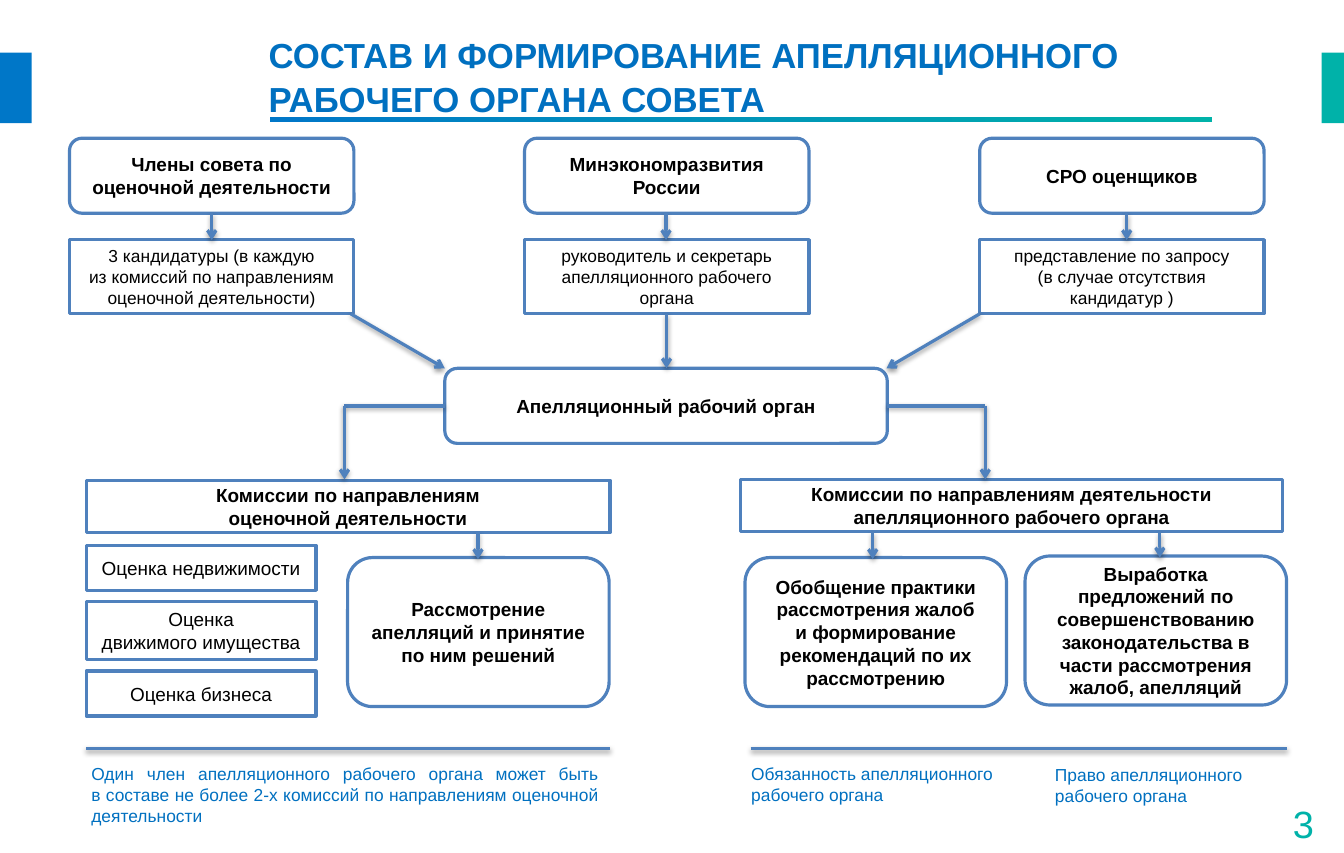
"""Build a slide on how the appeals working body is composed and formed."""
from pptx import Presentation
from pptx.dml.color import RGBColor
from pptx.enum.shapes import MSO_CONNECTOR, MSO_SHAPE
from pptx.enum.text import MSO_ANCHOR, PP_ALIGN
from pptx.oxml import parse_xml
from pptx.oxml.ns import nsdecls
from pptx.util import Pt

BLUE = RGBColor(0x00, 0x77, 0xC8)
TEAL = RGBColor(0x00, 0xB2, 0xA9)
TITLE_BLUE = RGBColor(0x00, 0x70, 0xC0)
LINE_BLUE = RGBColor(0x4F, 0x81, 0xBD)
BLACK = RGBColor(0x00, 0x00, 0x00)
WHITE = RGBColor(0xFF, 0xFF, 0xFF)

SHADOW = (
    f'<a:effectLst {nsdecls("a")}><a:outerShdw blurRad="40000" dist="20000" '
    'dir="5400000" rotWithShape="0"><a:srgbClr val="000000">'
    '<a:alpha val="38000"/></a:srgbClr></a:outerShdw></a:effectLst>'
)
ARROWHEAD = f'<a:tailEnd {nsdecls("a")} type="arrow"/>'


class Diagram:
    """Draw the slide elements in one shared style."""

    font_name = "Arial"
    line_width = Pt(2)

    def __init__(self, slide):
        self.shapes = slide.shapes

    def set_text(self, text_frame, text, size, color, bold, alignment):
        """Fill a text frame with uniformly styled text."""
        text_frame.word_wrap = True
        text_frame.text = text
        for paragraph in text_frame.paragraphs:
            paragraph.alignment = alignment
            paragraph.font.name = self.font_name
            paragraph.font.size = Pt(size)
            paragraph.font.bold = bold
            paragraph.font.color.rgb = color

    def bar(self, left, top, width, height, color, end_color=None):
        """Add a borderless bar, plain or with a horizontal gradient."""
        shape = self.shapes.add_shape(
            MSO_SHAPE.RECTANGLE, Pt(left), Pt(top), Pt(width), Pt(height))
        shape.shadow.inherit = False
        shape.line.fill.background()
        if end_color is None:
            shape.fill.solid()
            shape.fill.fore_color.rgb = color
        else:
            shape.fill.gradient()
            shape.fill.gradient_angle = 0
            for stop, stop_color in zip(shape.fill.gradient_stops, (color, end_color)):
                stop.color.rgb = stop_color

    def box(self, left, top, width, height, text, size=12, bold=True, rounded=False):
        """Add an outlined box with centred text."""
        kind = MSO_SHAPE.ROUNDED_RECTANGLE if rounded else MSO_SHAPE.RECTANGLE
        shape = self.shapes.add_shape(kind, Pt(left), Pt(top), Pt(width), Pt(height))
        shape.shadow.inherit = False
        shape.fill.solid()
        shape.fill.fore_color.rgb = WHITE
        shape.line.color.rgb = LINE_BLUE
        shape.line.width = self.line_width
        shape.text_frame.vertical_anchor = MSO_ANCHOR.MIDDLE
        self.set_text(shape.text_frame, text, size, BLACK, bold, PP_ALIGN.CENTER)

    def label(self, left, top, width, height, text, size=11, color=TITLE_BLUE,
              bold=False, alignment=PP_ALIGN.LEFT):
        """Add free-standing text and return its frame."""
        shape = self.shapes.add_textbox(Pt(left), Pt(top), Pt(width), Pt(height))
        self.set_text(shape.text_frame, text, size, color, bold, alignment)
        return shape.text_frame

    def line(self, start_x, start_y, end_x, end_y, arrow=False):
        """Add a shadowed line, with an arrowhead at its end if asked."""
        connector = self.shapes.add_connector(
            MSO_CONNECTOR.STRAIGHT, Pt(start_x), Pt(start_y), Pt(end_x), Pt(end_y))
        connector.line.color.rgb = LINE_BLUE
        connector.line.width = self.line_width
        if arrow:
            connector.get_or_add_ln().append(parse_xml(ARROWHEAD))
        connector.element.spPr.append(parse_xml(SHADOW))


def add_heading(diagram):
    """Add the title, the decorative bars and the slide number."""
    diagram.bar(0, 33.3, 20, 44.7, BLUE)
    diagram.bar(836.3, 33.3, 14.2, 44.7, TEAL)
    diagram.bar(171, 74, 596, 3.4, BLUE, TEAL)
    title = diagram.label(
        170, 20, 669, 54, "СОСТАВ И ФОРМИРОВАНИЕ АПЕЛЛЯЦИОННОГО\vРАБОЧЕГО ОРГАНА СОВЕТА",
        size=22, bold=True)
    title.margin_left = title.margin_top = title.margin_right = title.margin_bottom = 0
    title.paragraphs[0].line_spacing = 1.05
    diagram.label(768, 503, 70.5, 29, "3", size=24, color=TEAL, alignment=PP_ALIGN.RIGHT)


def add_sources(diagram):
    """Add the three nominating parties and the body they form."""
    sources = [
        ("Члены совета по оценочной деятельности",
         "3 кандидатуры (в каждую\nиз комиссий по направлениям оценочной деятельности)", 134),
        ("Минэкономразвития России",
         "руководитель и секретарь апелляционного рабочего органа", 421.5),
        ("СРО оценщиков",
         "представление по запросу\v(в случае отсутствия кандидатур )", 713),
    ]
    for column, (party, contribution, arrow_x) in enumerate(sources):
        left = 44 + 288 * column
        diagram.box(left, 87.5, 180, 47.5, party, rounded=True)
        diagram.box(left, 151.7, 180, 46.8, contribution, size=11, bold=False)
        diagram.line(arrow_x, 135, arrow_x, 152, arrow=True)
    diagram.box(281.5, 233.2, 280, 47.5, "Апелляционный рабочий орган", rounded=True)
    for start_x, end_x in ((222, 281.5), (421.8, 421.8), (620, 561)):
        diagram.line(start_x, 198.7, end_x, 233.2, arrow=True)


def add_commissions(diagram):
    """Add both groups of commissions with their tasks."""
    diagram.box(54.5, 304, 331.5, 33.3, "Комиссии по направлениям\vоценочной деятельности")
    diagram.box(468.7, 303.3, 343, 33.3,
                "Комиссии по направлениям деятельности апелляционного рабочего органа")
    for edge_x, branch_x in ((281.5, 218), (561.5, 623.5)):
        diagram.line(edge_x, 257, branch_x, 257)
        diagram.line(branch_x, 257, branch_x, 303.5, arrow=True)

    fields = [
        (345.3, 28.5, "Оценка недвижимости"),
        (380.8, 36.5, "Оценка\vдвижимого имущества"),
        (424.8, 28.5, "Оценка бизнеса"),
    ]
    for top, height, text in fields:
        diagram.box(54.5, top, 145.5, height, text, bold=False)

    tasks = [
        (220, 353, 302.5, "Рассмотрение\vапелляций и принятие по ним решений"),
        (471.5, 353, 552.3,
         "Обобщение практики рассмотрения жалоб\vи формирование рекомендаций по их рассмотрению"),
        (648.7, 352, 734,
         "Выработка предложений по совершенствованию законодательства в части "
         "рассмотрения жалоб, апелляций"),
    ]
    for left, top, arrow_x, text in tasks:
        diagram.box(left, top, 165.5, 94.3, text, rounded=True)
        diagram.line(arrow_x, 337, arrow_x, top + 1, arrow=True)


def add_notes(diagram):
    """Add the explanations below the two groups."""
    diagram.line(54.5, 473.7, 386, 473.7)
    diagram.line(475, 474, 814.3, 474)
    diagram.label(
        50.7, 479.5, 335.5, 47.5,
        "Один член апелляционного рабочего органа может быть\v"
        "в составе не более 2-х комиссий по направлениям оценочной деятельности",
        alignment=PP_ALIGN.JUSTIFY)
    diagram.label(468.3, 479.5, 169, 34, "Обязанность апелляционного рабочего органа")
    diagram.label(660.5, 480.2, 142.5, 34, "Право апелляционного рабочего органа")


def main():
    """Create and save the presentation."""
    presentation = Presentation()
    presentation.slide_width = Pt(850.5)
    presentation.slide_height = Pt(540)
    diagram = Diagram(presentation.slides.add_slide(presentation.slide_layouts[6]))
    add_heading(diagram)
    add_sources(diagram)
    add_commissions(diagram)
    add_notes(diagram)
    presentation.save("out.pptx")


if __name__ == "__main__":
    main()
